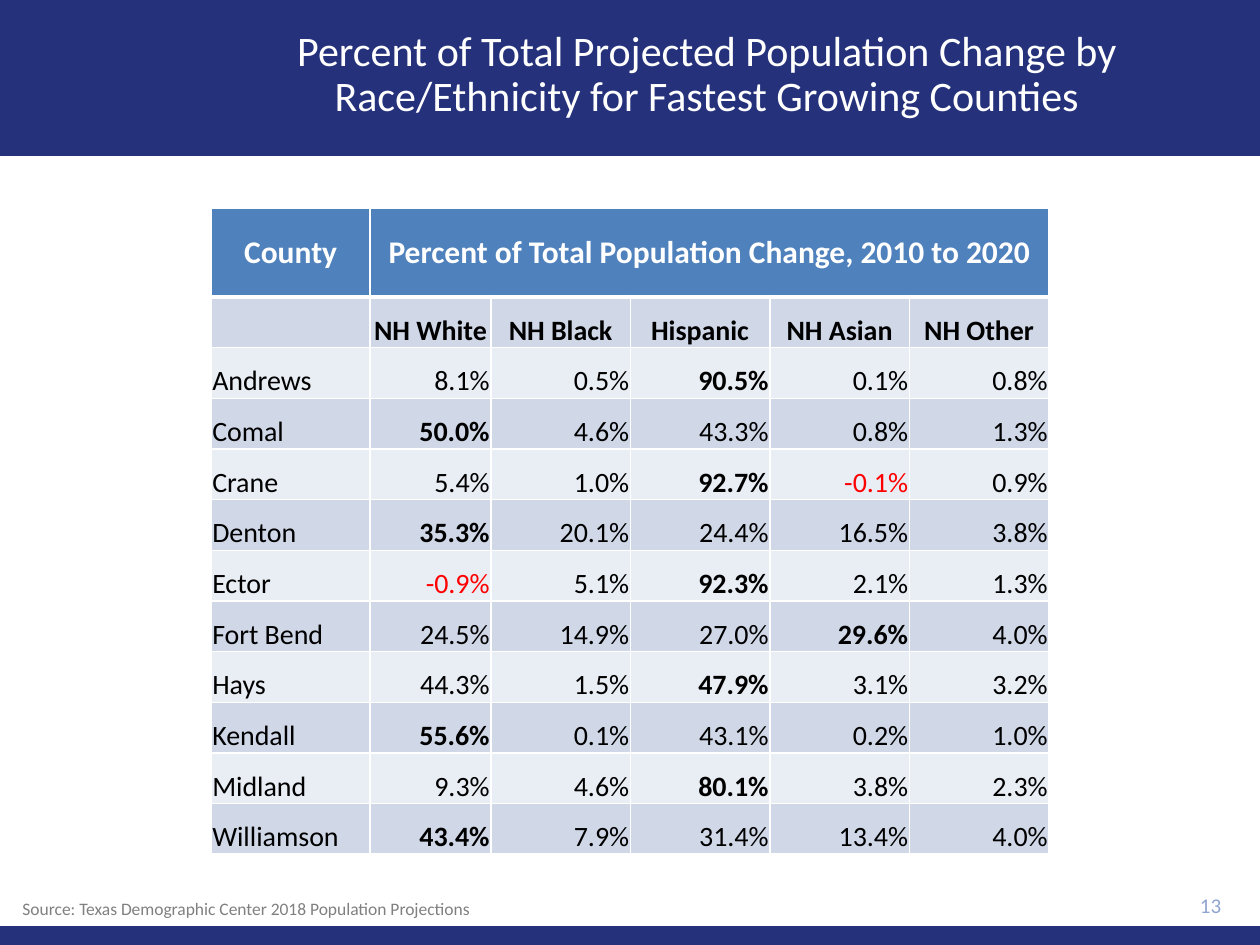
from lxml.etree import SubElement
from pptx import Presentation
from pptx.dml.color import RGBColor
from pptx.enum.shapes import MSO_SHAPE as Shape
from pptx.enum.text import MSO_ANCHOR as Anchor, PP_ALIGN as Align
from pptx.oxml import parse_xml
from pptx.oxml.ns import nsdecls, qn
from pptx.util import Inches, Pt

WIDTH, HEIGHT = 10, 7.5
FONT = "Calibri"
COLORS = {
    "navy": "25327B", "white": "FFFFFF", "header": "4F81BD",
    "dark_band": "D0D8E8", "light_band": "E9EDF4",
    "text": "000000", "negative": "FF0000",
    "number": "8FA5D1", "source": "808080",
}
GROUPS = ["NH White", "NH Black", "Hispanic", "NH Asian", "NH Other"]
COUNTIES = {
    "Andrews": [8.1, 0.5, 90.5, 0.1, 0.8],
    "Comal": [50.0, 4.6, 43.3, 0.8, 1.3],
    "Crane": [5.4, 1.0, 92.7, -0.1, 0.9],
    "Denton": [35.3, 20.1, 24.4, 16.5, 3.8],
    "Ector": [-0.9, 5.1, 92.3, 2.1, 1.3],
    "Fort Bend": [24.5, 14.9, 27.0, 29.6, 4.0],
    "Hays": [44.3, 1.5, 47.9, 3.1, 3.2],
    "Kendall": [55.6, 0.1, 43.1, 0.2, 1.0],
    "Midland": [9.3, 4.6, 80.1, 3.8, 2.3],
    "Williamson": [43.4, 7.9, 31.4, 13.4, 4.0],
}


def color(name):
    return RGBColor.from_string(COLORS[name])


def add_run(paragraph, text, size, color_name, bold=False):
    run = paragraph.add_run()
    run.text = text
    run.font.name, run.font.size, run.font.bold = FONT, Pt(size), bold
    run.font.color.rgb = color(color_name)


def add_band(slide, box):
    band = slide.shapes.add_shape(Shape.RECTANGLE, *map(Inches, box))
    band.shadow.inherit = False
    band.fill.solid()
    band.fill.fore_color.rgb = color("navy")
    band.line.fill.background()


def add_text(slide, box, text, size, color_name, align=Align.LEFT,
             anchor=Anchor.MIDDLE, line_spacing=1.0):
    frame = slide.shapes.add_textbox(*map(Inches, box)).text_frame
    frame.word_wrap = True
    frame.vertical_anchor = anchor
    paragraph = frame.paragraphs[0]
    paragraph.alignment = align
    paragraph.line_spacing = line_spacing
    add_run(paragraph, text, size, color_name)


def set_borders(cell, top=1, bottom=1):
    """Draw white cell borders, with the given top and bottom widths in points."""
    properties = cell._tc.get_or_add_tcPr()
    widths = {"lnL": 1, "lnR": 1, "lnT": top, "lnB": bottom}
    for position, (side, width) in enumerate(widths.items()):
        line = parse_xml(f'<a:{side} {nsdecls("a")} w="{Pt(width)}"/>')
        fill = SubElement(line, qn("a:solidFill"))
        SubElement(fill, qn("a:srgbClr"), val=COLORS["white"])
        properties.insert(position, line)


def fill_cell(cell, fill_name):
    cell.fill.solid()
    cell.fill.fore_color.rgb = color(fill_name)


def write_header_cell(cell, text):
    cell.vertical_anchor = Anchor.MIDDLE
    paragraph = cell.text_frame.paragraphs[0]
    paragraph.alignment = Align.CENTER
    add_run(paragraph, text, 18, "white", bold=True)


def write_body_cell(cell, text, align, bold=False, color_name="text"):
    cell.vertical_anchor = Anchor.BOTTOM
    cell.margin_left = cell.margin_right = cell.margin_top = Inches(0.01)
    cell.margin_bottom = 0
    paragraph = cell.text_frame.paragraphs[0]
    paragraph.alignment = align
    paragraph.font.size = Pt(16)
    if text:
        add_run(paragraph, text, 16, color_name, bold)


def add_county_table(slide, box):
    """Bold marks the largest share in a county, red marks a decline."""
    width, height = box[2:]
    row_count, column_count = len(COUNTIES) + 2, len(GROUPS) + 1
    table = slide.shapes.add_table(row_count, column_count, *map(Inches, box)).table

    first_columns = [0.19 * width, 0.144 * width]
    group_width = (width - sum(first_columns)) / (column_count - 2)
    column_widths = first_columns + [group_width] * (column_count - 2)
    for column, column_width in zip(table.columns, column_widths):
        column.width = Inches(column_width)
    header_height = 0.138 * height
    body_height = (height - header_height) / (row_count - 1)
    for index, row in enumerate(table.rows):
        row.height = Inches(body_height if index else header_height)
        fill_name = ("light_band", "dark_band")[index % 2] if index else "header"
        for cell in row.cells:
            fill_cell(cell, fill_name)
            set_borders(cell, top=3 if index == 1 else 1, bottom=1 if index else 3)

    table.cell(0, 1).merge(table.cell(0, column_count - 1))
    write_header_cell(table.cell(0, 0), "County")
    write_header_cell(table.cell(0, 1), "Percent of Total Population Change, 2010 to 2020")
    for column, heading in enumerate(["", *GROUPS]):
        write_body_cell(table.cell(1, column), heading, Align.CENTER, bold=True)
    for row, (county, shares) in enumerate(COUNTIES.items(), start=2):
        write_body_cell(table.cell(row, 0), county, Align.LEFT)
        for column, share in enumerate(shares, start=1):
            write_body_cell(table.cell(row, column), f"{share:.1f}%", Align.RIGHT,
                            bold=share == max(shares),
                            color_name="negative" if share < 0 else "text")


def add_title_region(slide, box):
    left, top, width, height = box
    add_band(slide, box)
    title_box = (left + 0.132 * width, top + 0.08 * height, 0.858 * width, 0.81 * height)
    add_text(slide, title_box,
             "Percent of Total Projected Population Change by "
             "Race/Ethnicity for Fastest Growing Counties",
             24, "white", Align.CENTER, line_spacing=0.9)


def add_footer_region(slide, box):
    left, top, width, height = box
    band_height = 0.3 * height
    band_top = top + height - band_height
    add_band(slide, (left, band_top, width, band_height))
    add_text(slide, (left + 0.89 * width, top + 0.02 * height, 0.089 * width, 0.68 * height),
             "13", 12, "number", Align.RIGHT)
    add_text(slide, (left + 0.008 * width, band_top - 0.27, 0.958 * width, 0.27),
             "Source: Texas Demographic Center 2018 Population Projections",
             10, "source", anchor=Anchor.TOP)


def main():
    presentation = Presentation()
    presentation.slide_width, presentation.slide_height = Inches(WIDTH), Inches(HEIGHT)
    slide = presentation.slides.add_slide(presentation.slide_layouts[6])
    add_title_region(slide, (0, 0, WIDTH, 0.165 * HEIGHT))
    table_width = 0.665 * WIDTH
    add_county_table(slide, ((WIDTH - table_width) / 2, 0.22 * HEIGHT,
                             table_width, 0.684 * HEIGHT))
    footer_height = HEIGHT / 15
    add_footer_region(slide, (0, HEIGHT - footer_height, WIDTH, footer_height))
    presentation.save("out.pptx")


if __name__ == "__main__":
    main()
